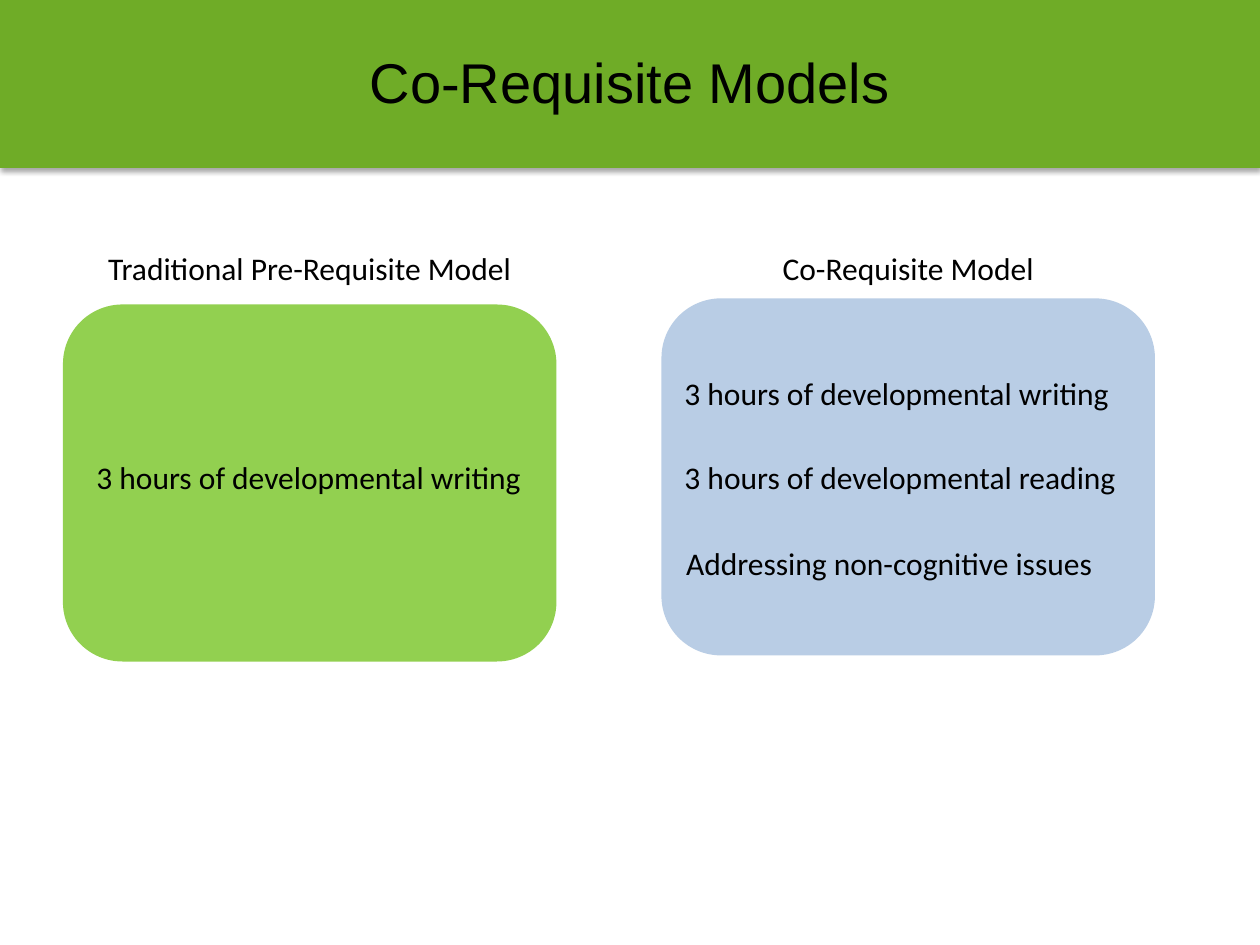
"""Build the slide comparing pre-requisite and co-requisite models."""
import pptx
import pptx.dml.color
import pptx.enum.shapes
import pptx.enum.text
import pptx.oxml
import pptx.util
from pptx.util import Pt

ALIGN = pptx.enum.text.PP_ALIGN
SHAPE = pptx.enum.shapes.MSO_SHAPE


def color(value):
    return pptx.dml.color.RGBColor.from_string(value)


def add_text(shapes, text, x, y, w, h=29, size=18, font="Calibri", align=ALIGN.LEFT):
    tf = shapes.add_textbox(Pt(x), Pt(y), Pt(w), Pt(h)).text_frame
    tf.word_wrap = True
    p = tf.paragraphs[0]
    p.text = text
    p.alignment = align
    p.font.size = Pt(size)
    p.font.name = font
    p.font.color.rgb = color("000000")
    return tf


prs = pptx.Presentation()
prs.slide_width, prs.slide_height = Pt(720), Pt(540)
s = prs.slides.add_slide(prs.slide_layouts[6])

for kind, fill, x, y, w, h in [
    (SHAPE.ROUNDED_RECTANGLE, "B9CDE5", 378, 170.5, 282, 204),
    (SHAPE.ROUNDED_RECTANGLE, "92D050", 36, 174, 282, 204),
    (SHAPE.RECTANGLE, "6FAC27", 0, 0, 720, 96),
]:
    sp = s.shapes.add_shape(kind, Pt(x), Pt(y), Pt(w), Pt(h))
    sp.shadow.inherit = False
    sp.fill.solid()
    sp.fill.fore_color.rgb = color(fill)
    sp.line.fill.background()

banner = sp
effects = banner.element.spPr.find(pptx.oxml.ns.qn("a:effectLst"))
effects.append(pptx.oxml.parse_xml(
    f'<a:outerShdw {pptx.oxml.ns.nsdecls("a")} blurRad="{Pt(3.1)}" dist="{Pt(1.8)}" '
    'dir="5400000" rotWithShape="0"><a:srgbClr val="000000">'
    '<a:alpha val="35000"/></a:srgbClr></a:outerShdw>'))

tf = add_text(s.shapes, "Co-Requisite Models", 0, 24, 720, 48, 32, "Arial", ALIGN.CENTER)
tf.margin_left = tf.margin_right = tf.margin_top = tf.margin_bottom = Pt(3)

group = s.shapes.add_group_shape()
for text, x, y, w in [
    ("3 hours of developmental writing", 384, 210, 258),
    ("3 hours of developmental reading", 384, 258, 276),
    ("Addressing non-cognitive issues", 385, 307.5, 258),
]:
    add_text(group.shapes, text, x, y, w)

add_text(s.shapes, "3 hours of developmental writing", 48, 258, 258)
for text, x in [("Traditional Pre-Requisite Model", 36), ("Co-Requisite Model", 378)]:
    add_text(s.shapes, text, x, 139, 282, align=ALIGN.CENTER)

prs.save("out.pptx")
